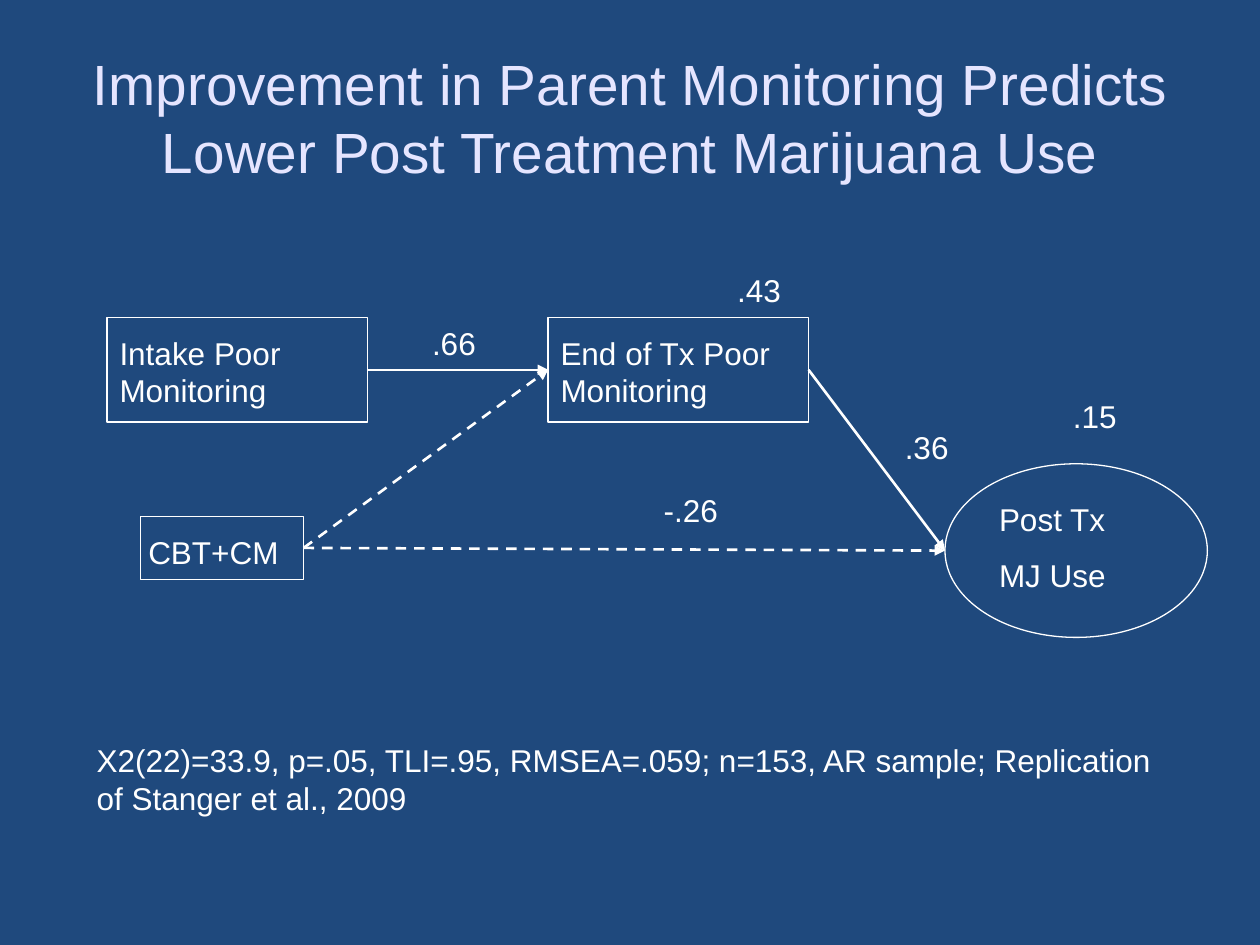
"""Build a path diagram slide on parent monitoring and marijuana use."""
from lxml import etree
from pptx import Presentation
from pptx.dml.color import RGBColor
from pptx.enum.dml import MSO_LINE
from pptx.enum.shapes import MSO_CONNECTOR, MSO_SHAPE
from pptx.enum.text import MSO_ANCHOR, PP_ALIGN
from pptx.oxml.ns import qn
from pptx.util import Cm, Pt

RECTANGLE, OVAL = MSO_SHAPE.RECTANGLE, MSO_SHAPE.OVAL
STRAIGHT, DASH = MSO_CONNECTOR.STRAIGHT, MSO_LINE.DASH
TOP, MIDDLE = MSO_ANCHOR.TOP, MSO_ANCHOR.MIDDLE
LEFT, CENTER = PP_ALIGN.LEFT, PP_ALIGN.CENTER

COLORS = {"background": "1F497D", "title": "E5E5FF", "foreground": "FFFFFF"}


class PathDiagram:
    """Hold the style and the current slide."""

    font_name = "Arial"
    text_size = 18
    paragraph_gap = 10

    def __init__(self, slide):
        self.slide = slide
        fill = slide.background.fill
        fill.solid()
        fill.fore_color.rgb = self.color("background")

    def color(self, name):
        return RGBColor.from_string(COLORS[name])

    def text(self, left, top, width, height, *lines, size=text_size,
             color="foreground", alignment=LEFT, anchor=TOP):
        shape = self.slide.shapes.add_textbox(Cm(left), Cm(top), Cm(width), Cm(height))
        frame = shape.text_frame
        frame.word_wrap = True
        frame.vertical_anchor = anchor
        frame.text = "\n".join(lines)
        for index, paragraph in enumerate(frame.paragraphs):
            paragraph.alignment = alignment
            paragraph.font.name = self.font_name
            paragraph.font.size = Pt(size)
            paragraph.font.color.rgb = self.color(color)
            if index:
                paragraph.space_before = Pt(self.paragraph_gap)

    def node(self, kind, left, top, width, height):
        shape = self.slide.shapes.add_shape(kind, Cm(left), Cm(top), Cm(width), Cm(height))
        shape.shadow.inherit = False
        shape.fill.background()
        shape.line.color.rgb = self.color("foreground")
        shape.line.width = Pt(0.75)
        return shape

    def arrow(self, source, target, dash=None):
        connector = self.slide.shapes.add_connector(
            STRAIGHT, source.left + source.width, source.top + source.height // 2,
            target.left, target.top + target.height // 2)
        line = connector.line
        line.color.rgb = self.color("foreground")
        line.width = Pt(1.5)
        if dash:
            line.dash_style = dash
        properties = connector.element.spPr
        etree.SubElement(properties.find(qn("a:ln")), qn("a:tailEnd"), type="triangle")
        etree.SubElement(properties, qn("a:effectLst"))


def main():
    presentation = Presentation()
    presentation.slide_width, presentation.slide_height = Cm(25.4), Cm(19.05)
    diagram = PathDiagram(presentation.slides.add_slide(presentation.slide_layouts[6]))

    diagram.text(1.27, 0.76, 22.86, 3.18,
                 "Improvement in Parent Monitoring Predicts Lower Post Treatment Marijuana Use",
                 size=32.4, color="title", alignment=CENTER, anchor=MIDDLE)

    intake = diagram.node(RECTANGLE, 2.16, 6.4, 5.25, 2.11)
    end_of_treatment = diagram.node(RECTANGLE, 11.05, 6.4, 5.25, 2.11)
    therapy = diagram.node(RECTANGLE, 2.84, 10.41, 3.28, 1.27)
    outcome = diagram.node(OVAL, 19.05, 9.35, 5.29, 3.5)

    diagram.arrow(intake, end_of_treatment)
    diagram.arrow(end_of_treatment, outcome)
    diagram.arrow(therapy, end_of_treatment, DASH)
    diagram.arrow(therapy, outcome, DASH)

    diagram.text(2.16, 6.6, 5.25, 1.8, "Intake Poor Monitoring")
    diagram.text(11.05, 6.6, 5.25, 1.8, "End of Tx Poor Monitoring")
    diagram.text(2.74, 10.62, 3.18, 1.02, "CBT+CM")
    diagram.text(19.89, 9.96, 3.6, 2.16, "Post Tx", "MJ Use")

    for value, left, top, width in (
        (".66", 8.46, 6.4, 1.48),
        (".43", 14.61, 5.33, 2.54),
        (".36", 17.99, 8.51, 2.54),
        (".15", 21.38, 7.87, 2.54),
        ("-.26", 13.13, 9.78, 1.9),
    ):
        diagram.text(left, top, width, 1.02, value)

    diagram.text(1.7, 14.81, 22.02, 1.8,
                 "X2(22)=33.9, p=.05, TLI=.95, RMSEA=.059; n=153, AR sample; "
                 "Replication of Stanger et al., 2009")
    presentation.save("out.pptx")


if __name__ == "__main__":
    main()
